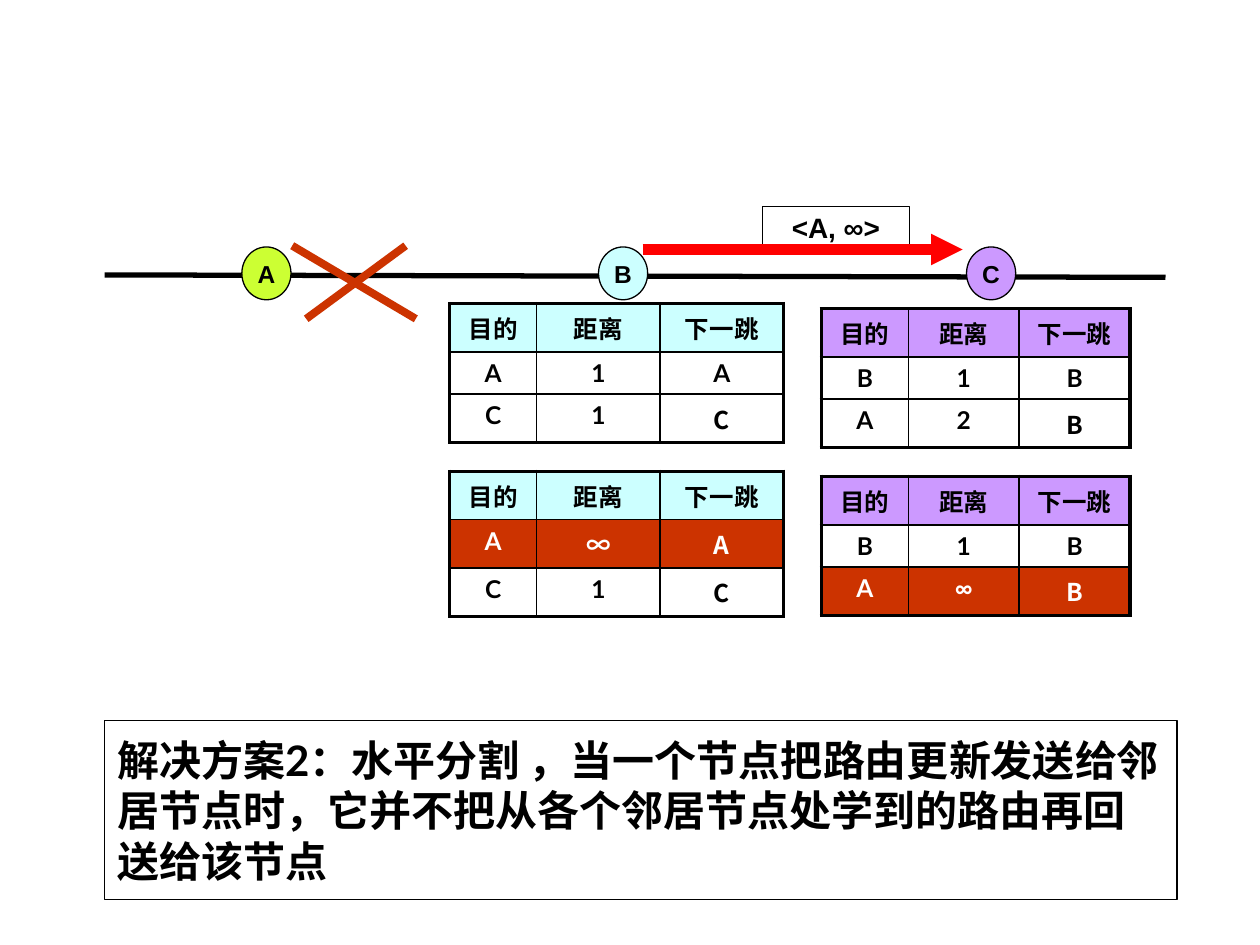
import pptx
import pptx.enum.shapes
import pptx.enum.text
import pptx.oxml
import pptx.oxml.ns
import pptx.util

Pt = pptx.util.Pt
COLORS = {
    "black": "000000", "white": "FFFFFF", "red": "FF0000", "alert": "CC3300",
    "node_a": "CCFF33", "node_b": "CCFFFF", "node_c": "CC99FF",
}
LATIN, CJK, NODE_FONT = "Lato", "Noto Sans CJK SC", "Arial"
HEADINGS = ["目的", "距离", "下一跳"]
OUTER, INNER = 2.25, 1
HEADER_HEIGHT, ROW_HEIGHT, TALL_ROW_HEIGHT = 27.7, 24, 27.5


def rgb(name):
    return pptx.dml.color.RGBColor.from_string(COLORS[name])


def write(frame, text, size=14, font=LATIN, color="black", align="CENTER"):
    paragraph = frame.paragraphs[0]
    paragraph.alignment = getattr(pptx.enum.text.PP_ALIGN, align)
    run = paragraph.add_run()
    run.text = text
    run.font.size = Pt(size)
    run.font.bold = True
    run.font.name = font
    run.font.color.rgb = rgb(color)
    east_asian = pptx.oxml.parse_xml(
        f'<a:ea {pptx.oxml.ns.nsdecls("a")} typeface="{CJK}"/>')
    run.font._element.find(pptx.oxml.ns.qn("a:latin")).addnext(east_asian)


def paint(target, color):
    if color:
        target.fill.solid()
        target.fill.fore_color.rgb = rgb(color)
    else:
        target.fill.background()


def add_box(slide, box, text, shape="RECTANGLE", fill=None, wrap=False, **text_format):
    kind = getattr(pptx.enum.shapes.MSO_SHAPE, shape)
    outline = slide.shapes.add_shape(kind, *map(Pt, box))
    outline.shadow.inherit = False
    paint(outline, fill)
    outline.line.color.rgb = rgb("black")
    outline.line.width = Pt(0.75)
    outline.text_frame.word_wrap = wrap
    outline.text_frame.vertical_anchor = pptx.enum.text.MSO_ANCHOR.MIDDLE
    write(outline.text_frame, text, **text_format)


def add_line(slide, start, end, color, width, arrow=False):
    line = slide.shapes.add_connector(
        pptx.enum.shapes.MSO_CONNECTOR.STRAIGHT, *map(Pt, start + end))
    line.line.color.rgb = rgb(color)
    line.line.width = Pt(width)
    namespace = pptx.oxml.ns.nsdecls("a")
    if arrow:
        line.line._get_or_add_ln().append(
            pptx.oxml.parse_xml(f'<a:tailEnd {namespace} type="triangle"/>'))
    line._element.spPr.append(pptx.oxml.parse_xml(f"<a:effectLst {namespace}/>"))


def set_borders(cell, row, column, last):
    """Draw thick edges on the outside of the table and thin ones inside."""
    outside = {"L": column == 0, "R": column == last,
               "T": row == 0, "B": row == last}
    edges = [pptx.oxml.parse_xml(
        f'<a:ln{side} {pptx.oxml.ns.nsdecls("a")} w="{Pt(OUTER if thick else INNER)}">'
        f'<a:solidFill><a:srgbClr val="{COLORS["black"]}"/></a:solidFill></a:ln{side}>')
        for side, thick in outside.items()]
    properties = cell._tc.get_or_add_tcPr()
    for position, edge in enumerate(edges):
        properties.insert(position, edge)


def routing_table(slide, box, routes, header_color, lost_row=None, cjk_cells=()):
    """Place one node's routes; lost_row is the row that has become unreachable."""
    left, top, width = box
    heights = [HEADER_HEIGHT, ROW_HEIGHT, TALL_ROW_HEIGHT]
    if lost_row == 1:
        heights[1] = TALL_ROW_HEIGHT
    table = slide.shapes.add_table(
        3, 3, Pt(left), Pt(top), Pt(width), Pt(sum(heights))).table
    first_column = 49.7
    for column, size in zip(table.columns, [first_column] + [(width - first_column) / 2] * 2):
        column.width = Pt(size)
    for row, (height, values) in enumerate(zip(heights, [HEADINGS] + routes)):
        table.rows[row].height = Pt(height)
        lost = row == lost_row
        for column, value in enumerate(values):
            cell = table.cell(row, column)
            paint(cell, header_color if row == 0 else "alert" if lost else None)
            write(cell.text_frame, value, color="white" if lost else "black",
                  font=CJK if (row, column) in cjk_cells else LATIN)
            set_borders(cell, row, column, last=2)


def network_link(slide, box):
    left, top, width = box
    add_line(slide, (left, top + 39), (left + width, top + 40.4), "black", 3)
    for name, offset in (("A", 78.4), ("B", 282.2), ("C", 492.5)):
        add_box(slide, (left + offset, top + 23, 28.1, 30.2), name, shape="OVAL",
                fill=f"node_{name.lower()}", font=NODE_FONT)


def failure_and_update(slide, box):
    """Cross out the A-B link and show the update that B sends to C."""
    left, top, _ = box
    add_box(slide, (left + 375.8, top, 84.2, 23.8), "<A, ∞>", size=16, font=NODE_FONT)
    cross_top, cross_bottom = top + 22.3, top + 64.1
    add_line(slide, (left + 172, cross_top), (left + 115.2, cross_bottom), "alert", 4.5)
    add_line(slide, (left + 107.2, cross_top), (left + 177.8, cross_bottom), "alert", 4.5)
    add_line(slide, (left + 307.4, top + 24.5), (left + 490.3, top + 24.5),
             "red", 6, arrow=True)


def routing_tables(slide, box):
    """Tables before the update above, tables after it below."""
    left, top = box
    after = top + 95.8
    c_left, c_drop = left + 212.4, 2.9
    b_width, c_width = 190.8, 176.4
    routing_table(slide, (left, top, b_width), [["A", "1", "A"], ["C", "1", "C"]],
                  "node_b", cjk_cells={(2, 2)})
    routing_table(slide, (c_left, top + c_drop, c_width),
                  [["B", "1", "B"], ["A", "2", "B"]], "node_c", cjk_cells={(2, 2)})
    routing_table(slide, (left, after, b_width), [["A", "∞", "A"], ["C", "1", "C"]],
                  "node_b", lost_row=1, cjk_cells={(1, 1), (1, 2), (2, 2)})
    routing_table(slide, (c_left, after + c_drop, c_width),
                  [["B", "1", "B"], ["A", "∞", "B"]], "node_c",
                  lost_row=2, cjk_cells={(2, 2)})


def main():
    deck = pptx.Presentation()
    deck.slide_width, deck.slide_height = Pt(720), Pt(540)
    slide = deck.slides.add_slide(deck.slide_layouts[6])
    network = (59.8, 118.1, 606.2)
    network_link(slide, network)
    routing_tables(slide, (257, 173.5))
    failure_and_update(slide, network)
    add_box(slide, (59.8, 411.8, 612.7, 102.2),
            "解决方案2：水平分割 ，当一个节点把路由更新发送给邻居节点时，"
            "它并不把从各个邻居节点处学到的路由再回送给该节点",
            fill="white", wrap=True, size=24, align="LEFT")
    deck.save("out.pptx")


if __name__ == "__main__":
    main()
